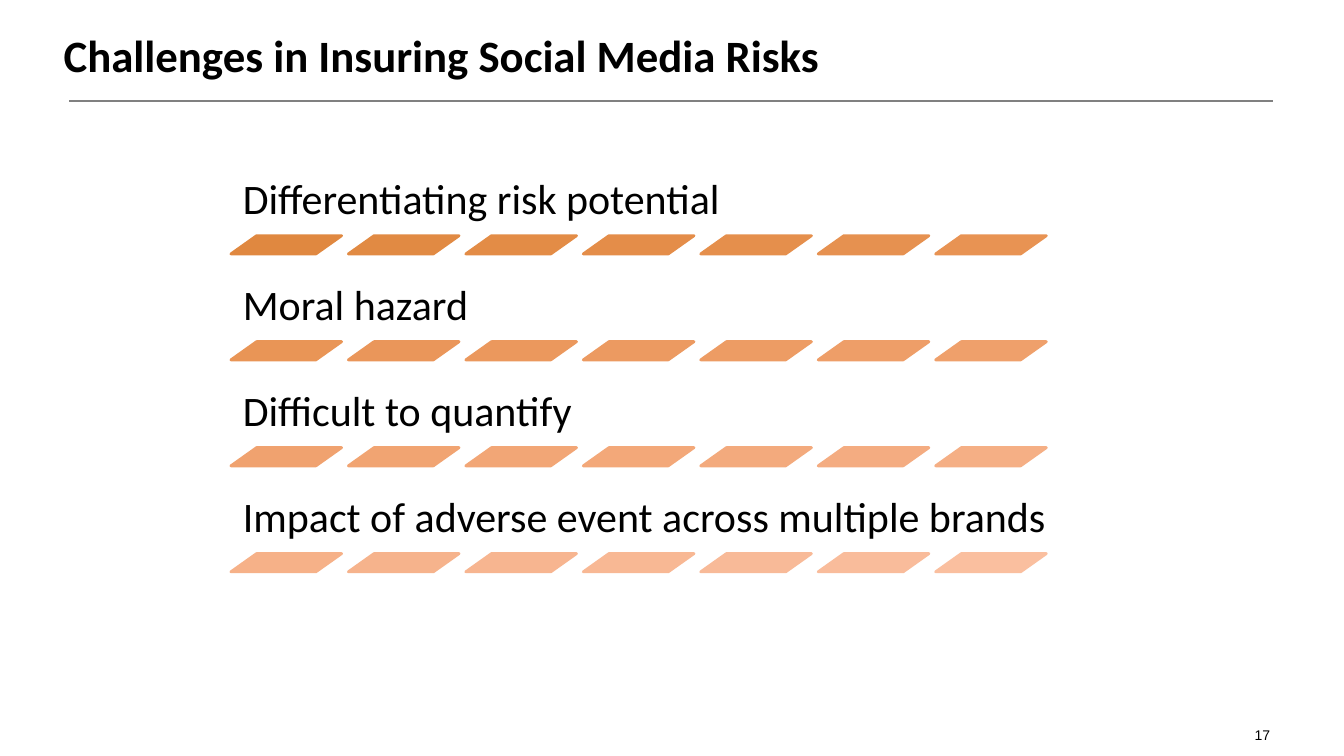
"""Build the slide on challenges in insuring social media risks."""
from lxml.etree import SubElement
from pptx import Presentation
from pptx.dml.color import RGBColor
from pptx.enum.shapes import MSO_CONNECTOR as Connector, MSO_SHAPE as Shape
from pptx.enum.text import MSO_ANCHOR as Anchor, MSO_AUTO_SIZE as AutoSize, PP_ALIGN as Align
from pptx.oxml.ns import qn
from pptx.util import Cm, Pt


def color(value):
    return RGBColor.from_string(value)


def add_text(paragraph, text, size, font_name="Calibri", bold=False):
    run = paragraph.add_run()
    run.text = text
    run.font.size = Pt(size)
    run.font.name = font_name
    run.font.bold = bold
    run.font.color.rgb = color("000000")


presentation = Presentation()
presentation.slide_width, presentation.slide_height = Cm(33.87), Cm(19.05)
slide = presentation.slides.add_slide(presentation.slide_layouts[5])

title = slide.shapes.title
title.left, title.top, title.width, title.height = Cm(1.35), Cm(0.56), Cm(30.99), Cm(1.63)
title.text_frame.auto_size = AutoSize.SHAPE_TO_FIT_TEXT
title.text_frame.vertical_anchor = Anchor.TOP
paragraph = title.text_frame.paragraphs[0]
paragraph.alignment = Align.LEFT
add_text(paragraph, "Challenges in Insuring Social Media Risks", 32, bold=True)

rule = slide.shapes.add_connector(Connector.STRAIGHT, Cm(1.75), Cm(2.54), Cm(32.08), Cm(2.54))
rule.line.color.rgb = color("808080")
rule.line.width = Pt(1.5)
SubElement(rule._element.spPr, qn("a:effectLst"))

page_number = slide.shapes.add_textbox(Cm(31.32), Cm(17.98), Cm(0.94), Cm(0.89))
page_number.text_frame.word_wrap = False
page_number.text_frame.auto_size = AutoSize.SHAPE_TO_FIT_TEXT
paragraph = page_number.text_frame.paragraphs[0]
paragraph.alignment = Align.RIGHT
paragraph.line_spacing = 1.5
add_text(paragraph, "17", 10, "Arial")

challenges = [
    ("Differentiating risk potential", "E08840 E18A43 E38C46 E48D49 E58F4C E69150 E89353"),
    ("Moral hazard", "E99556 EA965A EB985D EC9A61 ED9C64 EE9E68 EFA06B"),
    ("Difficult to quantify", "F0A26F F1A472 F2A676 F3A879 F3AA7D F4AC81 F5AF85"),
    ("Impact of adverse event across multiple brands",
     "F6B188 F6B38C F7B590 F8B894 F8BA98 F9BC9B FABF9F"),
]
left, top, row_pitch, bar_pitch, label_height = 5.82, 4.04, 2.67, 2.96, 1.9

for row, (challenge, bar_colors) in enumerate(challenges):
    row_top = top + row * row_pitch
    label = slide.shapes.add_textbox(Cm(left), Cm(row_top), Cm(20.96), Cm(label_height))
    frame = label.text_frame
    frame.word_wrap = True
    frame.vertical_anchor = Anchor.BOTTOM
    frame.margin_left = frame.margin_right = frame.margin_top = frame.margin_bottom = Cm(0.3)
    frame.paragraphs[0].line_spacing = 0.9
    add_text(frame.paragraphs[0], challenge, 30)

    for column, bar_color in enumerate(bar_colors.split()):
        bar = slide.shapes.add_shape(Shape.PARALLELOGRAM, Cm(left + column * bar_pitch),
                                     Cm(row_top + label_height), Cm(2.79), Cm(0.46))
        bar.adjustments[0] = 1.41
        bar.shadow.inherit = False
        bar.fill.solid()
        bar.fill.fore_color.rgb = color(bar_color)
        bar.line.color.rgb = color(bar_color)
        bar.line.width = Pt(2)

presentation.save("out.pptx")
